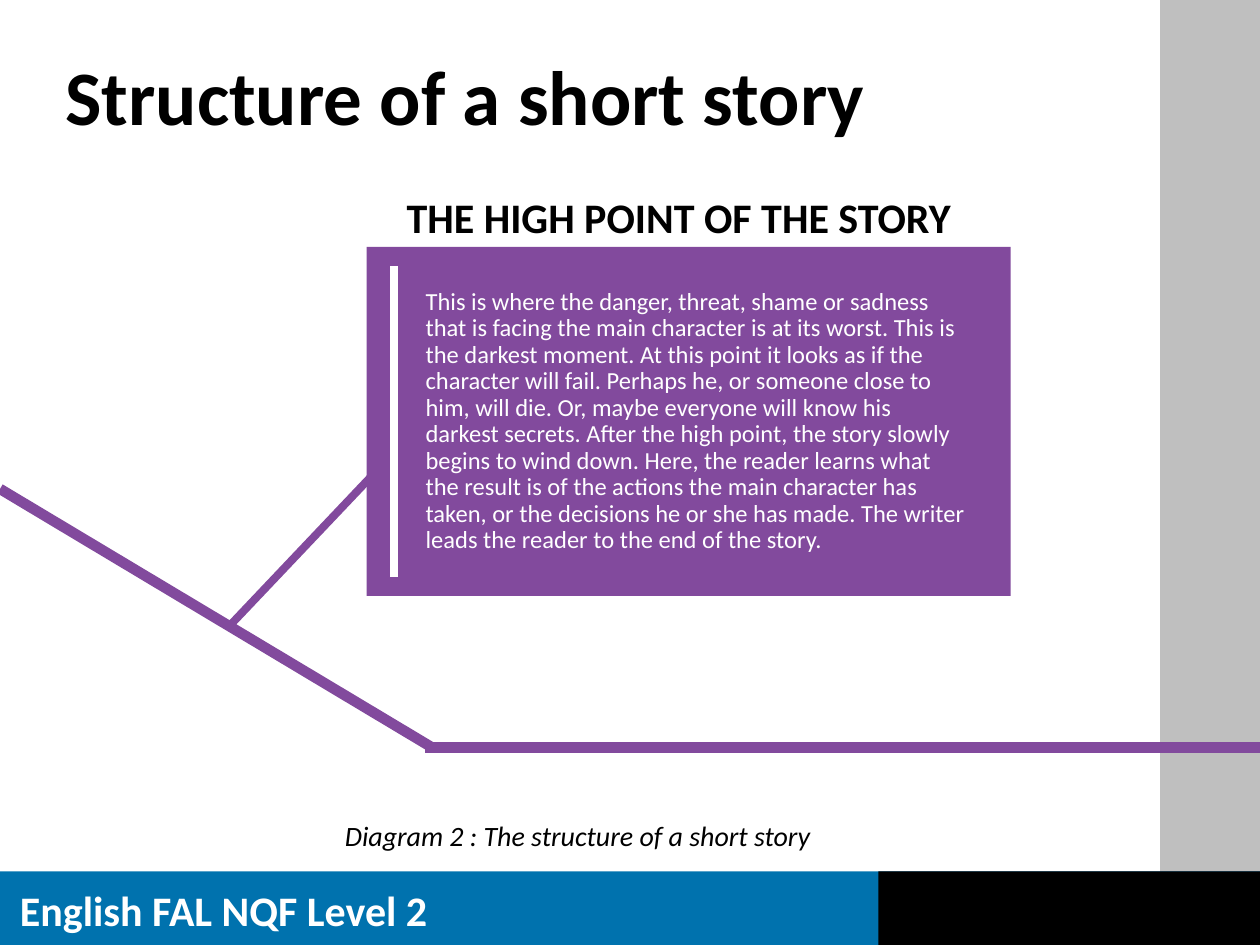
import pptx
import pptx.util
import pptx.dml.color
import pptx.enum.shapes
import pptx.enum.text
import pptx.oxml

Pt = pptx.util.Pt
Align = pptx.enum.text.PP_ALIGN
Anchor = pptx.enum.text.MSO_ANCHOR
PURPLE, WHITE, BLACK = "824A9D", "FFFFFF", "000000"
STORY = (
    "This is where the danger, threat, shame or sadness that is facing the main "
    "character is at its worst. This is the darkest moment. At this point it looks "
    "as if the character will fail. Perhaps he, or someone close to him, will die. "
    "Or, maybe everyone will know his darkest secrets. After the high point, the "
    "story slowly begins to wind down. Here, the reader learns what the result is "
    "of the actions the main character has taken, or the decisions he or she has "
    "made. The writer leads the reader to the end of the story."
)


def color(code):
    """Turn a hex string into a colour."""
    return pptx.dml.color.RGBColor.from_string(code)


def block(slide, box, fill):
    """Draw a plain filled rectangle."""
    shape = slide.shapes.add_shape(
        pptx.enum.shapes.MSO_SHAPE.RECTANGLE, *map(Pt, box))
    shape.shadow.inherit = False
    shape.fill.solid()
    shape.fill.fore_color.rgb = color(fill)
    shape.line.fill.background()
    return shape


def stroke(slide, start, end, code, width):
    """Draw a straight line without a shadow."""
    line = slide.shapes.add_connector(
        pptx.enum.shapes.MSO_CONNECTOR.STRAIGHT, *map(Pt, start + end))
    line.line.color.rgb = color(code)
    line.line.width = Pt(width)
    props = line._element.spPr
    props.append(props.makeelement(pptx.oxml.ns.qn("a:effectLst"), {}))


def write(shape, text, size, code, bold=False, italic=False,
          align=Align.LEFT, anchor=Anchor.MIDDLE, space=0.9):
    """Put one formatted run into a shape."""
    frame = shape.text_frame
    frame.word_wrap = True
    frame.auto_size = pptx.enum.text.MSO_AUTO_SIZE.NONE
    frame.vertical_anchor = anchor
    para = frame.paragraphs[0]
    para.alignment, para.line_spacing = align, space
    run = para.add_run()
    run.text = text
    font = run.font
    font.name, font.size = "Calibri", Pt(size)
    font.bold, font.italic = bold, italic
    font.color.rgb = color(code)


def label(slide, box, text, size, code, **style):
    """Add a text box."""
    write(slide.shapes.add_textbox(*map(Pt, box)), text, size, code, **style)


def frame_page(slide, box):
    """Draw the side band and the footer."""
    left, top, width, height = box
    foot, band, split = top + 498, left + 663, left + 502
    block(slide, (band, top, left + width - band, height), "BFBFBF")
    block(slide, (left, foot, width, top + height - foot), "0072AE")
    block(slide, (split, foot, left + width - split, top + height - foot), BLACK)
    label(slide, (left + 4.3, foot + 4, 270, 36), "English FAL NQF Level 2", 24,
          WHITE, bold=True, anchor=Anchor.TOP, space=1)


def head(slide, box):
    """Place and format the title."""
    title = slide.shapes.title
    title.left, title.top, title.width, title.height = map(Pt, box)
    write(title, "Structure of a short story", 44, BLACK, bold=True)


def plot(slide, box):
    """Draw the falling story line and its level end."""
    left, top, width, height = box
    bend = left + 247
    stroke(slide, (bend - 4, top + height), (left + width, top + height), PURPLE, 6)
    stroke(slide, (left, top), (bend, top + height), PURPLE, 6)


def panel(slide, box):
    """Draw the high point panel with its bar, pointer and heading."""
    left, top, width, height = box
    block(slide, box, PURPLE)
    bar = left + 15.8
    stroke(slide, (bar, top + 11), (bar, top + height - 11), WHITE, 4.5)
    body = block(slide, (left + 26.6, top + 21, 324.7, height - 42), PURPLE)
    write(body, STORY, 14, WHITE)
    stroke(slide, (left - 77.8, top + 216), (left + 2.8, top + 131), PURPLE, 4.5)
    label(slide, (left + 15.8, top - 24.2, 335, 22.3),
          "THE HIGH POINT OF THE STORY", 24, BLACK, bold=True, space=0.6)


def main():
    """Build and save the slide."""
    deck = pptx.Presentation()
    deck.slide_width, deck.slide_height = Pt(720), Pt(540)
    slide = deck.slides.add_slide(deck.slide_layouts[5])
    frame_page(slide, (0, 0, 720, 540))
    head(slide, (30.2, 28.8, 622.8, 56.9))
    label(slide, (18.7, 466.6, 622.8, 19.4),
          "Diagram 2 : The structure of a short story", 16, BLACK,
          italic=True, align=Align.CENTER, anchor=Anchor.TOP)
    plot(slide, (0, 279.4, 720, 147.8))
    panel(slide, (209.5, 141.1, 368, 199.4))
    deck.save("out.pptx")


if __name__ == "__main__":
    main()
